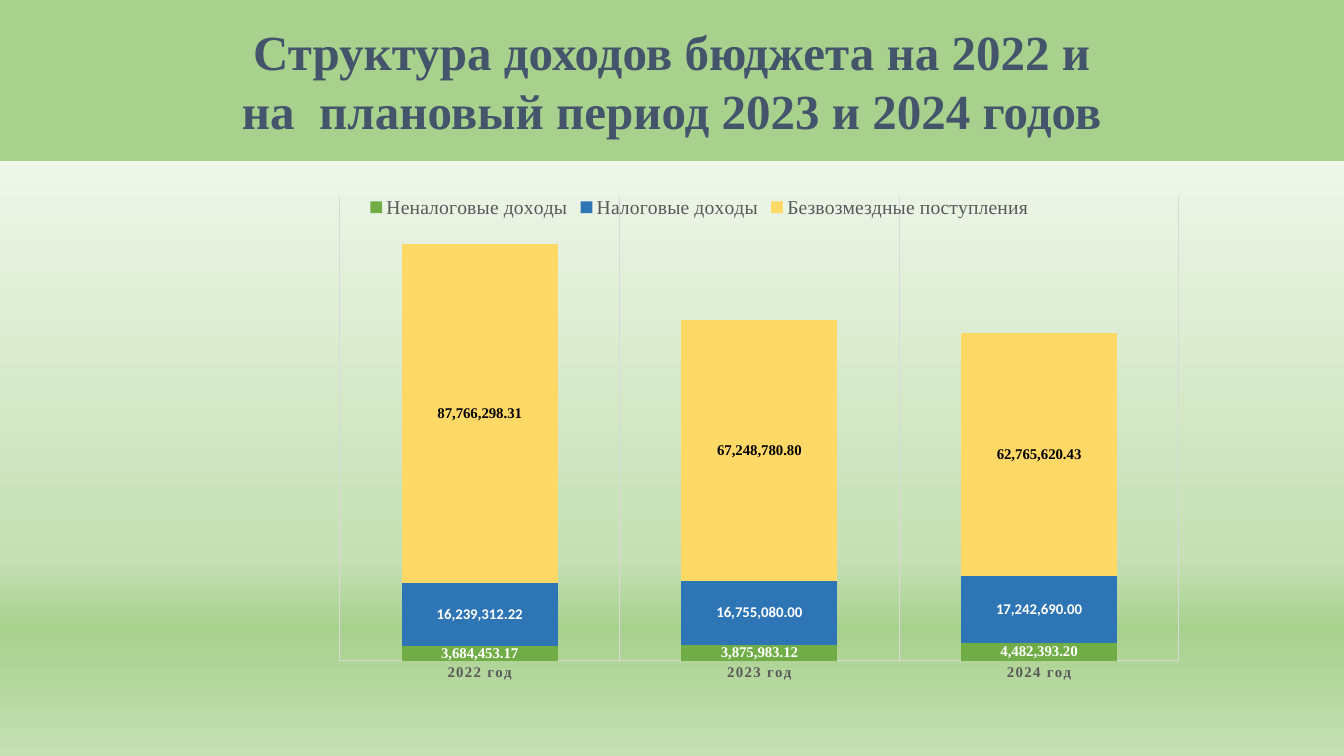
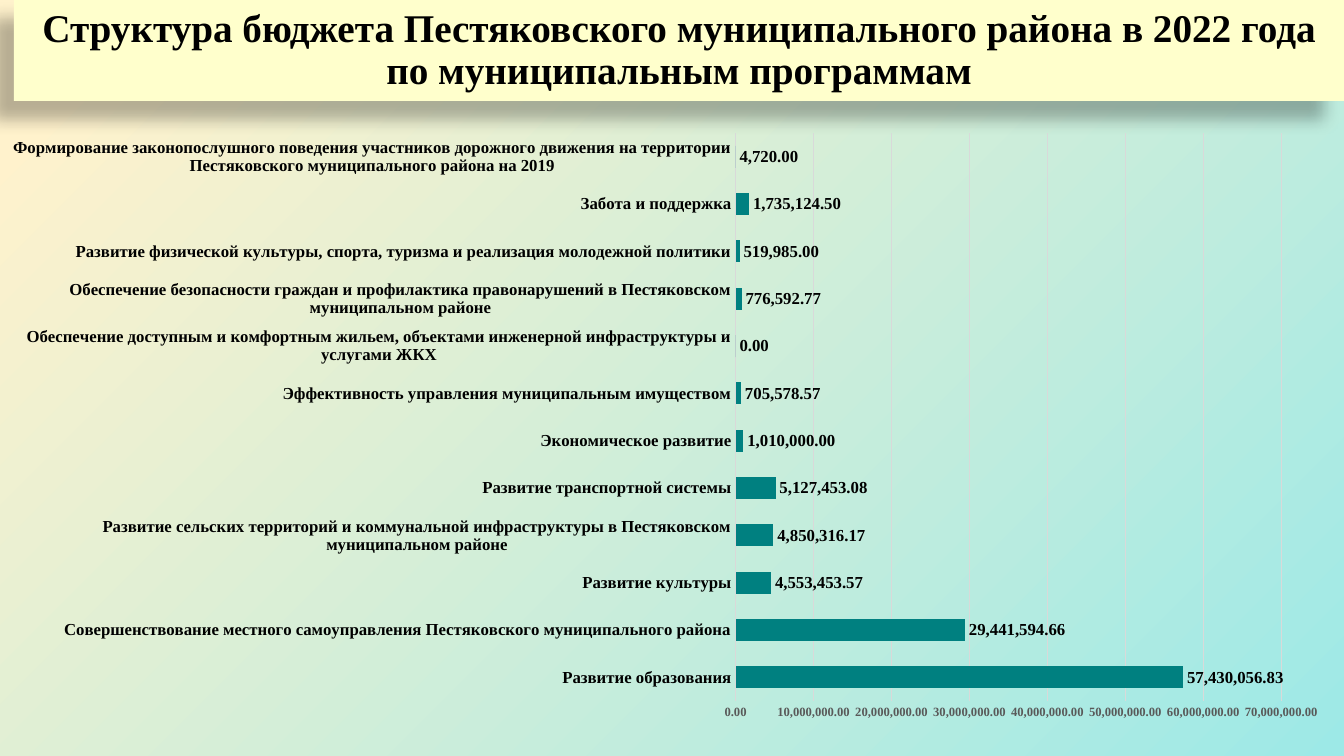
from pptx import Presentation
from pptx.chart.data import CategoryChartData
from pptx.dml.color import RGBColor
from pptx.enum.chart import (XL_CHART_TYPE, XL_LABEL_POSITION, XL_LEGEND_POSITION,
                             XL_TICK_LABEL_POSITION, XL_TICK_MARK)
from pptx.enum.shapes import MSO_SHAPE
from pptx.enum.text import MSO_ANCHOR, PP_ALIGN
from pptx.oxml import parse_xml
from pptx.oxml.ns import nsdecls
from pptx.util import Emu, Pt

# Shared style
PX = 914400 / 100.8
SERIF = "Times New Roman"
SANS = "Calibri"
MONEY = "#,##0.00"

BLACK = RGBColor(0x00, 0x00, 0x00)
WHITE = RGBColor(0xFF, 0xFF, 0xFF)
SLATE = RGBColor(0x44, 0x54, 0x6A)
GRAY = RGBColor(0x59, 0x59, 0x59)
GRID = RGBColor(0xD9, 0xD9, 0xD9)
BAND_GREEN = RGBColor(0xA9, 0xD1, 0x8E)
PALE_GREEN = RGBColor(0xC5, 0xE0, 0xB4)
GREEN = RGBColor(0x70, 0xAD, 0x47)
BLUE = RGBColor(0x2E, 0x75, 0xB6)
GOLD = RGBColor(0xFF, 0xD9, 0x66)
TEAL = RGBColor(0x00, 0x80, 0x80)
AQUA = RGBColor(0x9D, 0xE9, 0xE7)
CREAM = RGBColor(0xFF, 0xF2, 0xCC)
LEMON = RGBColor(0xFF, 0xFF, 0xCC)

# Gradient directions
DOWNWARD = '<a:lin ang="5400000" scaled="0"/>'
FROM_CORNER = '<a:path path="circle"><a:fillToRect l="100000" t="100000"/></a:path>'


def px(length):
    return Emu(round(length * PX))


def set_font(font, size, color, name=SERIF, bold=True):
    font.name = name
    font.size = Pt(size)
    font.bold = bold
    font.color.rgb = color


def set_line(line, width):
    line.color.rgb = GRID
    line.width = Pt(width)


class BudgetDeck:
    def __init__(self):
        self.deck = Presentation()
        self.deck.slide_width = px(1344)
        self.deck.slide_height = px(756)
        self.page = None

    def add_page(self, stops, direction):
        """Start a slide with a gradient background."""
        self.page = self.deck.slides.add_slide(self.deck.slide_layouts[6])
        stop_list = "".join(
            f'<a:gs pos="{percent * 1000}"><a:srgbClr val="{color}"/></a:gs>'
            for percent, color in stops)
        background = parse_xml(
            f'<p:bg {nsdecls("p", "a")}><p:bgPr><a:gradFill rotWithShape="1">'
            f'<a:gsLst>{stop_list}</a:gsLst>{direction}</a:gradFill>'
            f'<a:effectLst/></p:bgPr></p:bg>')
        self.page._element.cSld.insert(0, background)

    def add_title(self, frame, lines, size, color, fill, spacing=1.0, shadow=False):
        """Add the title band at the top of the slide."""
        box = self.page.shapes.add_shape(MSO_SHAPE.RECTANGLE, *map(px, frame))
        box.fill.solid()
        box.fill.fore_color.rgb = fill
        box.line.fill.background()
        box.shadow.inherit = False
        if shadow:
            effects = box._element.spPr.find(
                "{http://schemas.openxmlformats.org/drawingml/2006/main}effectLst")
            effects.append(parse_xml(
                f'<a:outerShdw {nsdecls("a")} blurRad="150000" dist="250000" '
                f'dir="8460000" algn="tr" rotWithShape="0"><a:srgbClr val="{BLACK}">'
                f'<a:alpha val="28000"/></a:srgbClr></a:outerShdw>'))
        text = box.text_frame
        text.word_wrap = True
        text.vertical_anchor = MSO_ANCHOR.MIDDLE
        text.text = "\n".join(lines)
        for para in text.paragraphs:
            para.alignment = PP_ALIGN.CENTER
            para.line_spacing = spacing
            set_font(para.font, size, color)

    def add_bars(self, kind, frame, categories, series, gap, overlap):
        """Add a bar chart; series rows are name, values, fill, label colour, label font."""
        data = CategoryChartData(number_format=MONEY)
        data.categories = categories
        for name, values, *_ in series:
            data.add_series(name, values)
        chart = self.page.shapes.add_chart(kind, *map(px, frame), data).chart
        chart.has_title = False
        chart.has_legend = False
        set_font(chart.font, 10, BLACK, SANS, False)
        plot = chart.plots[0]
        plot.vary_by_categories = False
        plot.gap_width = gap
        plot.overlap = overlap
        for bars, (_, _, fill, label_color, label_font) in zip(plot.series, series):
            bars.invert_if_negative = False
            bars.format.fill.solid()
            bars.format.fill.fore_color.rgb = fill
            labels = bars.data_labels
            labels.show_value = True
            labels.number_format = MONEY
            labels.number_format_is_linked = False
            set_font(labels.font, 10.6, label_color, label_font)
        for axis in (chart.category_axis, chart.value_axis):
            axis.major_tick_mark = XL_TICK_MARK.NONE
            axis.minor_tick_mark = XL_TICK_MARK.NONE
        chart.value_axis.tick_labels.number_format = MONEY
        chart.value_axis.tick_labels.number_format_is_linked = False
        return chart

    def add_legend(self, chart):
        chart.has_legend = True
        chart.legend.position = XL_LEGEND_POSITION.TOP
        chart.legend.include_in_layout = False
        set_font(chart.legend.font, 14, GRAY, bold=False)

    def place_plot(self, chart, left, top, width, height):
        """Fix the inner plot area as fractions of the chart."""
        area = chart._chartSpace.chart.plotArea
        for old in area.findall("{*}layout"):
            area.remove(old)
        area.insert(0, parse_xml(
            f'<c:layout {nsdecls("c")}><c:manualLayout><c:layoutTarget val="inner"/>'
            f'<c:xMode val="edge"/><c:yMode val="edge"/><c:x val="{left}"/>'
            f'<c:y val="{top}"/><c:w val="{width}"/><c:h val="{height}"/>'
            f'</c:manualLayout></c:layout>'))


def add_income_page(budget):
    budget.add_page([(0, WHITE), (74, PALE_GREEN), (83, BAND_GREEN), (100, PALE_GREEN)],
                    DOWNWARD)
    budget.add_title((0, 0, 1344, 161),
                     ["Структура доходов бюджета на 2022 и",
                      "на  плановый период 2023 и 2024 годов"],
                     35, SLATE, BAND_GREEN)
    series = [
        ("Неналоговые доходы", (3684453.17, 3875983.12, 4482393.20), GREEN, WHITE, SERIF),
        ("Налоговые доходы", (16239312.22, 16755080, 17242690), BLUE, WHITE, SANS),
        ("Безвозмездные поступления", (87766298.31, 67248780.80, 62765620.43),
         GOLD, BLACK, SERIF),
    ]
    chart = budget.add_bars(XL_CHART_TYPE.COLUMN_STACKED, (200, 185, 999, 553),
                            [f"{year} год" for year in (2022, 2023, 2024)],
                            series, 79, 100)
    budget.add_legend(chart)
    budget.place_plot(chart, 0.14, 0.02, 0.84, 0.84)
    # Axes
    years = chart.category_axis
    set_font(years.tick_labels.font, 10.6, GRAY)
    years.tick_labels.font._rPr.set("spc", "100")
    set_line(years.format.line, 0.75)
    years.has_major_gridlines = True
    set_line(years.major_gridlines.format.line, 0.75)
    chart.value_axis.has_major_gridlines = False
    chart.value_axis.visible = False


def add_programme_page(budget):
    budget.add_page([(0, AQUA), (93, CREAM)], FROM_CORNER)
    budget.add_title((14, 0, 1330, 101),
                     ["Структура бюджета Пестяковского муниципального района "
                      "в 2022 года по муниципальным программам"],
                     28, BLACK, LEMON, spacing=0.9, shadow=True)
    programmes = {
        "Развитие образования": 57430056.83,
        "Совершенствование местного самоуправления Пестяковского "
        "муниципального района": 29441594.66,
        "Развитие культуры": 4553453.57,
        "Развитие сельских территорий и коммунальной инфраструктуры "
        "в Пестяковском муниципальном районе": 4850316.17,
        "Развитие транспортной системы": 5127453.08,
        "Экономическое развитие": 1010000,
        "Эффективность управления муниципальным имуществом": 705578.57,
        "Обеспечение доступным и комфортным жильем, объектами инженерной "
        "инфраструктуры и услугами ЖКХ": 0,
        "Обеспечение безопасности граждан и профилактика правонарушений "
        "в Пестяковском муниципальном районе": 776592.77,
        "Развитие физической культуры, спорта, туризма и реализация "
        "молодежной политики": 519985,
        "Забота и поддержка": 1735124.50,
        "Формирование законопослушного поведения участников дорожного движения "
        "на территории Пестяковского муниципального района на 2019": 4720,
    }
    chart = budget.add_bars(XL_CHART_TYPE.BAR_CLUSTERED, (13, 121, 1331, 611),
                            list(programmes),
                            [("Series 1", list(programmes.values()), TEAL, BLACK, SERIF)],
                            115, -20)
    labels = chart.plots[0].series[0].data_labels
    labels.position = XL_LABEL_POSITION.OUTSIDE_END
    labels.font.size = Pt(12)
    # Axes
    names = chart.category_axis
    set_font(names.tick_labels.font, 12, BLACK)
    names.tick_label_position = XL_TICK_LABEL_POSITION.NEXT_TO_AXIS
    set_line(names.format.line, 1)
    amounts = chart.value_axis
    set_font(amounts.tick_labels.font, 9, GRAY)
    amounts.format.line.fill.background()
    amounts.has_major_gridlines = True
    set_line(amounts.major_gridlines.format.line, 0.75)


def main():
    budget = BudgetDeck()
    add_income_page(budget)
    add_programme_page(budget)
    budget.deck.save("out.pptx")


if __name__ == "__main__":
    main()
